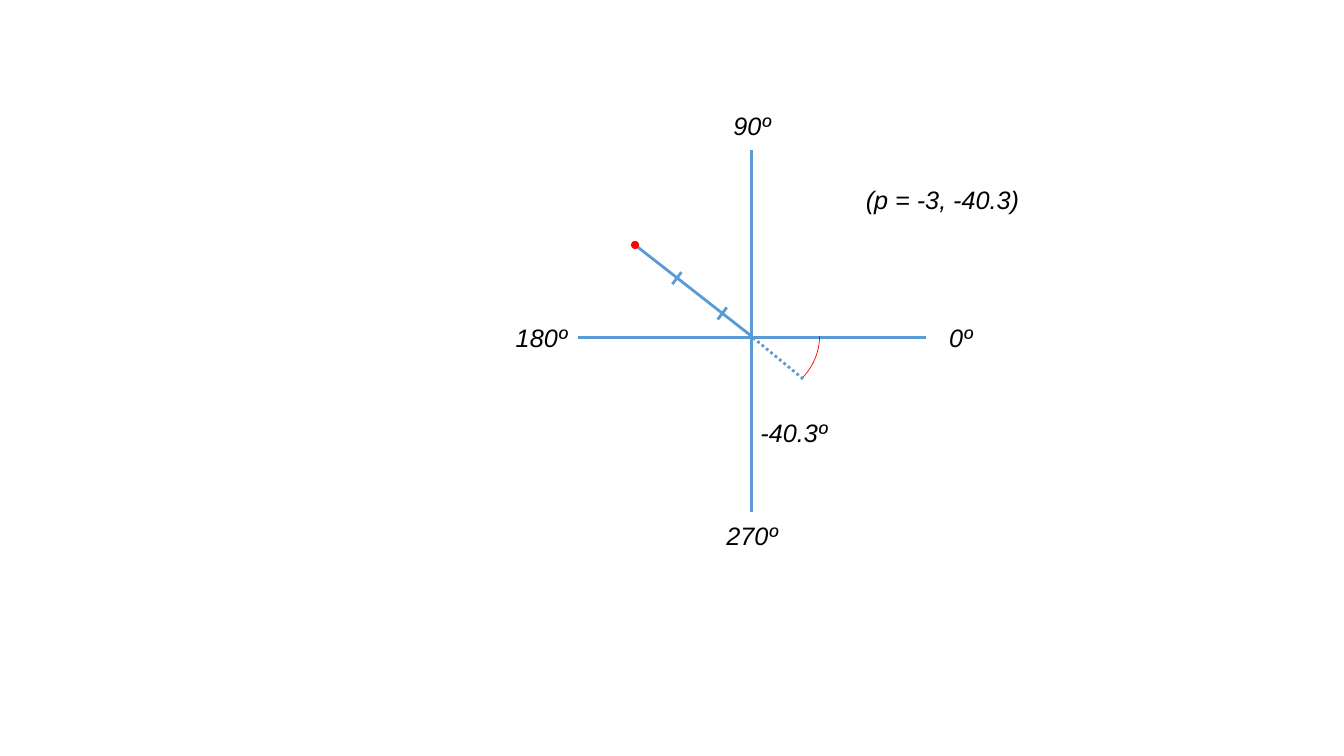
import pptx
import pptx.util
import pptx.dml.color
import pptx.enum.dml
import pptx.enum.shapes
import pptx.enum.text
from lxml import etree

Pt = pptx.util.Pt
SHAPE = pptx.enum.shapes.MSO_SHAPE
BLUE, RED, WHITE, BLACK = "5B9BD5", "FF0000", "FFFFFF", "000000"


def color(hex_code):
    return pptx.dml.color.RGBColor.from_string(hex_code)


def add_segment(slide, start, end, dash=None):
    segment = slide.shapes.add_connector(
        pptx.enum.shapes.MSO_CONNECTOR.STRAIGHT, *map(Pt, start + end))
    segment.line.color.rgb = color(BLUE)
    segment.line.width = Pt(2)
    if dash is not None:
        segment.line.dash_style = dash
    etree.SubElement(segment._element.spPr, pptx.oxml.ns.qn("a:effectLst"))


def add_label(slide, center, width, wording, align):
    height = 28.8
    label = slide.shapes.add_textbox(
        Pt(center[0] - width / 2), Pt(center[1] - height / 2), Pt(width), Pt(height))
    frame = label.text_frame
    frame.text = wording
    frame.word_wrap = False
    frame.auto_size = pptx.enum.text.MSO_AUTO_SIZE.SHAPE_TO_FIT_TEXT
    frame.paragraphs[0].alignment = align
    font = frame.paragraphs[0].runs[0].font
    font.name, font.size, font.italic = "Arial", Pt(18), True
    font.color.rgb = color(BLACK)


def add_figure(slide, preset, corner, size, fill=None, outline=None, weight=1):
    figure = slide.shapes.add_shape(preset, *map(Pt, corner + size))
    figure.shadow.inherit = False
    if fill:
        figure.fill.solid()
        figure.fill.fore_color.rgb = color(fill)
    else:
        figure.fill.background()
    if outline:
        figure.line.color.rgb = color(outline)
        figure.line.width = Pt(weight)
    else:
        figure.line.fill.background()
    return figure


def draw_polar_plot(slide, left, top, width, height):
    pole_x, pole_y = left + width / 2, top + height / 2

    def at(x, y):
        return pole_x + x, pole_y + y

    add_segment(slide, at(-width / 2, 0), at(width / 2, 0))

    centered = pptx.enum.text.PP_ALIGN.CENTER
    for wording, center, label_width, align in (
        ("90º", (0, -151.2), 41.8, centered),
        ("0º", (149.2, 0), 31.7, centered),
        ("270º", (0, 141.1), 51.8, centered),
        ("180º", (-150.4, 0), 51.8, centered),
        ("(p = -3, -40.3)", (139.4, -98.6), 130.3, pptx.enum.text.PP_ALIGN.LEFT),
        ("-40.3º", (29.9, 67.7), 62.6, centered),
    ):
        add_label(slide, at(*center), label_width, wording, align)

    angle = add_figure(slide, SHAPE.ARC, at(-46, -45.4), (94.3, 88.6),
                       outline=RED, weight=0.5)
    angle.adjustments[0] = 0
    angle.adjustments[1] = 54
    add_figure(slide, SHAPE.RECTANGLE, at(1.5, 28.8), (33.1, 16.6),
               fill=WHITE, outline=WHITE)

    point_x, point_y = -83.5, -66.2
    add_segment(slide, at(point_x, point_y), at(-0.7, -1.4))
    for tick_x, tick_y in ((-21.2, -17.3), (-53.6, -42.5)):
        add_segment(slide, at(tick_x - 3.25, tick_y + 4.3),
                    at(tick_x + 3.25, tick_y - 4.3))
    add_segment(slide, at(0.8, 0), at(37.5, 30.2),
                pptx.enum.dml.MSO_LINE.ROUND_DOT)

    diameter = 5.8
    add_figure(slide, SHAPE.OVAL,
               at(point_x - diameter / 2, point_y - diameter / 2),
               (diameter, diameter), fill=RED)
    add_segment(slide, at(0, -134), at(0, 124.6))


def main():
    deck = pptx.Presentation()
    deck.slide_width, deck.slide_height = Pt(960), Pt(540)
    slide = deck.slides.add_slide(deck.slide_layouts[6])
    draw_polar_plot(slide, 412.6, 116.7, 249, 249)
    deck.save("out.pptx")


if __name__ == "__main__":
    main()
